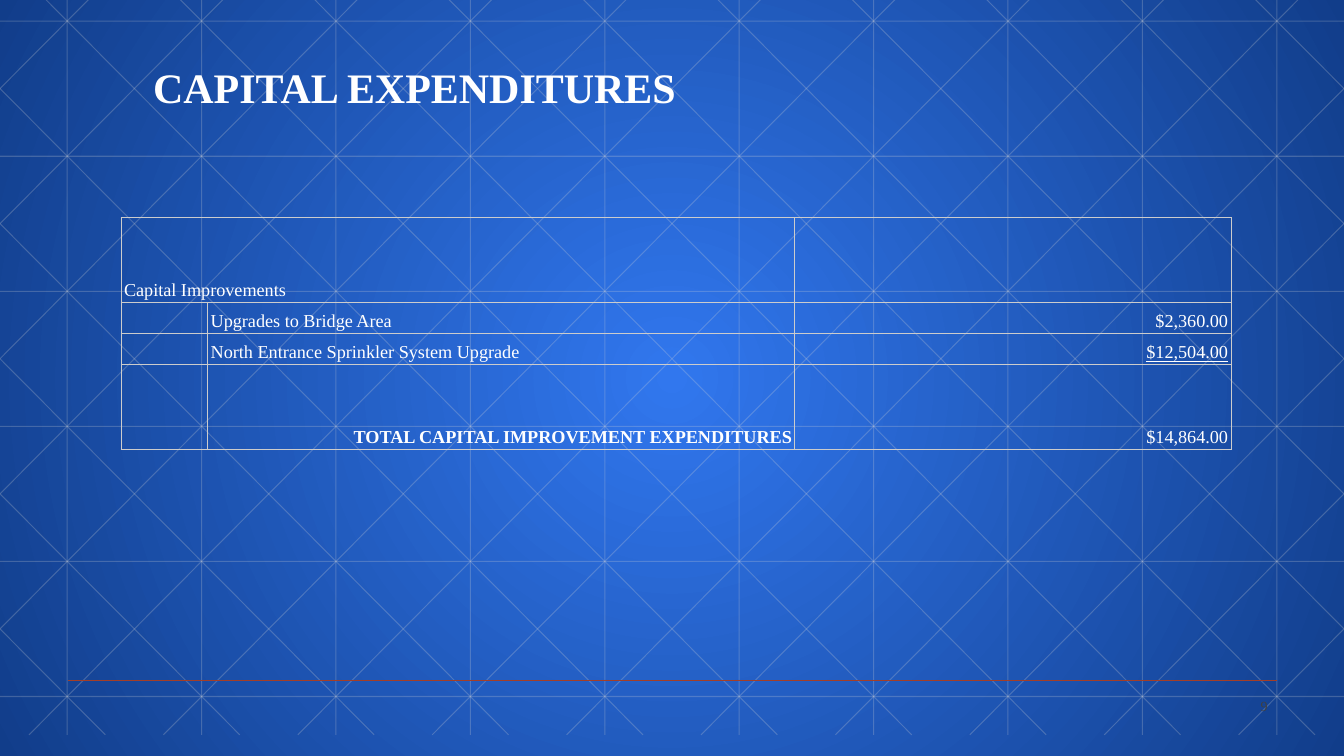
from lxml.etree import SubElement
from pptx import Presentation
from pptx.dml.color import RGBColor
from pptx.enum.shapes import MSO_CONNECTOR as CONN
from pptx.enum.text import MSO_ANCHOR as ANCHOR, PP_ALIGN as ALIGN
from pptx.oxml import parse_xml
from pptx.oxml.ns import nsdecls, qn
from pptx.util import Inches, Pt

WHITE = RGBColor(0xFF, 0xFF, 0xFF)
GRID = RGBColor(0xD8, 0xD8, 0xD8)
BORDER = RGBColor(0xCC, 0xCC, 0xCC)
RUST = RGBColor(0xA4, 0x3E, 0x27)
SLATE = RGBColor(0x40, 0x40, 0x40)
GLOW = RGBColor(0x31, 0x77, 0xEE)
NAVY = RGBColor(0x11, 0x3D, 0x8A)
FONT = "Times New Roman"
WIDTH, HEIGHT = 13.33, 7.5
TOP, BOTTOM = -0.21, 7.29
STEP = WIDTH / 10
DIAGONAL_RUN = 7.46
ROWS = [
    ("Capital Improvements", "", ""),
    ("", "Upgrades to Bridge Area", "$2,360.00"),
    ("", "North Entrance Sprinkler System Upgrade", "$12,504.00"),
    ("", "TOTAL CAPITAL IMPROVEMENT EXPENDITURES", "$14,864.00"),
]
COLUMN_WIDTHS = (0.86, 5.82, 4.33)
ROW_HEIGHTS = (0.84, 0.31, 0.31, 0.84)


def set_background(s):
    """Fill the slide with a radial blue gradient."""
    bg = parse_xml(
        f'<p:bg {nsdecls("p", "a")}><p:bgPr><a:gradFill rotWithShape="1"><a:gsLst>'
        f'<a:gs pos="0"><a:srgbClr val="{GLOW}"/></a:gs>'
        f'<a:gs pos="100000"><a:srgbClr val="{NAVY}"/></a:gs></a:gsLst>'
        '<a:path path="circle"><a:fillToRect l="50000" t="50000" r="50000" b="50000"/>'
        '</a:path></a:gradFill><a:effectLst/></p:bgPr></p:bg>')
    s.element.cSld.insert(0, bg)


def add_line(s, x1, y1, x2, y2, color=GRID, width=0.75, opacity=24):
    """Draw a straight line with the given opacity in percent."""
    line = s.shapes.add_connector(CONN.STRAIGHT, Inches(x1), Inches(y1), Inches(x2), Inches(y2))
    line.line.color.rgb = color
    line.line.width = Pt(width)
    sp_pr = line._element.spPr
    SubElement(sp_pr, qn("a:effectLst"))
    if opacity < 100:
        clr = sp_pr.find(".//" + qn("a:srgbClr"))
        SubElement(clr, qn("a:alpha"), val=str(opacity * 1000))


def add_lattice(s):
    """Draw the vertical, horizontal and mirrored diagonal grid lines."""
    for i in range(10):
        x = STEP * (i + 0.5)
        add_line(s, x, TOP, x, BOTTOM)
    for i in range(6):
        y = 0.21 + 1.34 * i
        add_line(s, 0, y, WIDTH, y)
    slope = (BOTTOM - TOP) / DIAGONAL_RUN
    for i in range(-5, 10):
        start = 0.25 + STEP * i
        x1, x2 = max(start, 0), min(start + DIAGONAL_RUN, WIDTH)
        y1, y2 = (TOP + (x - start) * slope for x in (x1, x2))
        add_line(s, x1, y1, x2, y2)
        add_line(s, WIDTH - x1, y1, WIDTH - x2, y2)


def style_paragraph(p, size, color=WHITE, bold=False, align=ALIGN.LEFT, spacing=1.0):
    """Apply font and spacing to a paragraph and its runs."""
    p.alignment = align
    p.line_spacing = spacing
    for font in [p.font] + [r.font for r in p.runs]:
        font.name, font.size, font.bold = FONT, Pt(size), bold
        font.color.rgb = color


def add_text(s, text, x, y, w, h, anchor, size, **style):
    """Add a wrapped one-paragraph text box."""
    tf = s.shapes.add_textbox(Inches(x), Inches(y), Inches(w), Inches(h)).text_frame
    tf.word_wrap = True
    tf.vertical_anchor = anchor
    tf.text = text
    style_paragraph(tf.paragraphs[0], size, **style)


def style_cell(cell, text, bold, align):
    """Write one transparent, thinly bordered table cell."""
    cell.margin_left = cell.margin_right = Inches(0.03)
    cell.margin_top = cell.margin_bottom = Inches(0.02)
    cell.vertical_anchor = ANCHOR.BOTTOM
    cell.text = text
    style_paragraph(cell.text_frame.paragraphs[0], 13, bold=bold, align=align, spacing=1.15)
    tc_pr = cell._tc.get_or_add_tcPr()
    for side in ("lnL", "lnR", "lnT", "lnB"):
        ln = SubElement(tc_pr, qn("a:" + side), w=str(Pt(0.75)))
        SubElement(SubElement(ln, qn("a:solidFill")), qn("a:srgbClr"), val=str(BORDER))
    cell.fill.background()


def add_expenditures(s):
    """Add the table of capital expenditures."""
    table = s.shapes.add_table(len(ROWS), len(COLUMN_WIDTHS), Inches(1.2), Inches(2.16),
                               Inches(sum(COLUMN_WIDTHS)), Inches(sum(ROW_HEIGHTS))).table
    table.first_row = table.horz_banding = False
    for column, width in zip(table.columns, COLUMN_WIDTHS):
        column.width = Inches(width)
    for row, height in zip(table.rows, ROW_HEIGHTS):
        row.height = Inches(height)
    for i, texts in enumerate(ROWS):
        for j, text in enumerate(texts):
            total = text.startswith("TOTAL")
            align = ALIGN.RIGHT if total or j == 2 else ALIGN.LEFT
            style_cell(table.cell(i, j), text, total, align)
    table.cell(0, 0).merge(table.cell(0, 1))
    table.cell(2, 2).text_frame.paragraphs[0].runs[0].font.underline = True


def main():
    """Build the capital expenditures slide."""
    prs = Presentation()
    prs.slide_width, prs.slide_height = Inches(WIDTH), Inches(HEIGHT)
    s = prs.slides.add_slide(prs.slide_layouts[6])
    set_background(s)
    add_lattice(s)
    add_line(s, 0.67, 6.75, 12.67, 6.75, RUST, 1, 100)
    add_text(s, "CAPITAL EXPENDITURES", 1.42, 0.55, 10.5, 0.62, ANCHOR.BOTTOM, 30,
             bold=True, spacing=0.9)
    add_expenditures(s)
    add_text(s, "9", 11.67, 6.85, 1, 0.3, ANCHOR.MIDDLE, 10, color=SLATE, align=ALIGN.RIGHT)
    prs.save("out.pptx")


if __name__ == "__main__":
    main()
